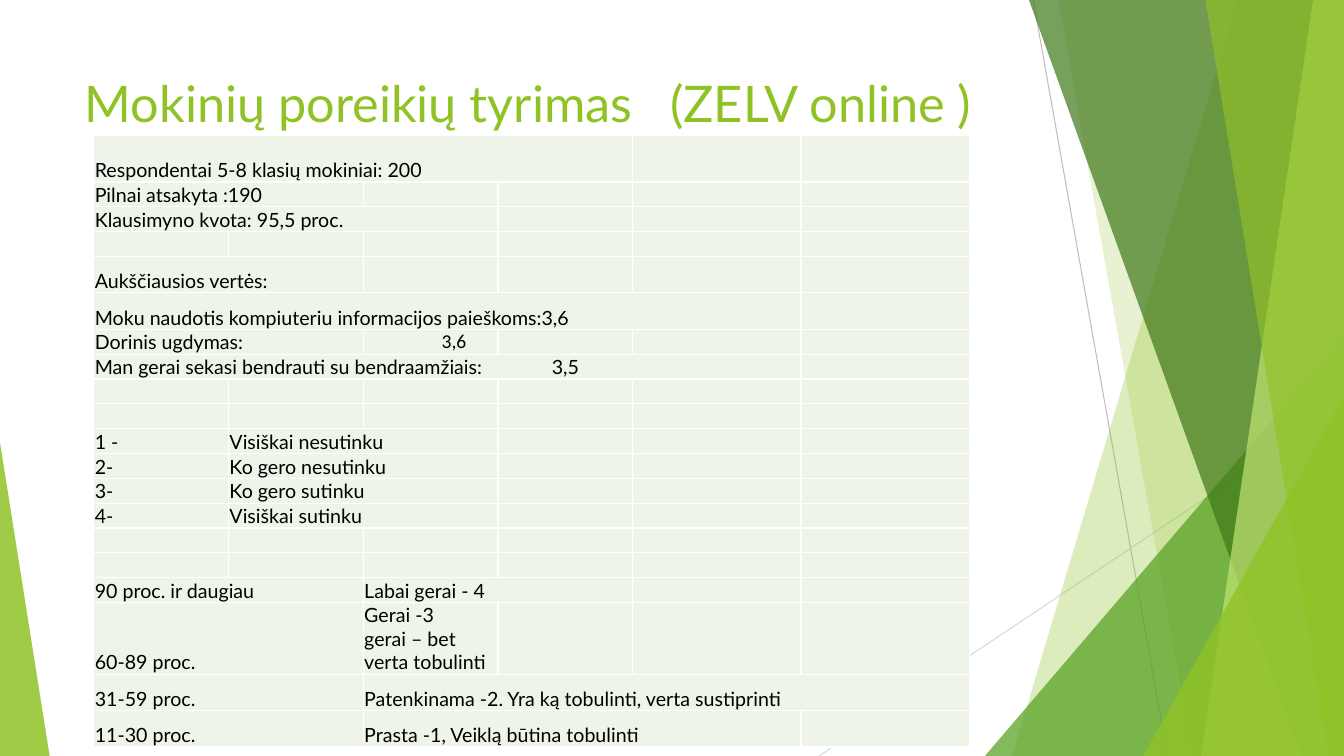
"""Build the slide on the survey of pupils' needs."""
from lxml.etree import SubElement as Sub
from pptx import Presentation
from pptx.dml.color import RGBColor as Rgb
from pptx.enum.shapes import MSO_CONNECTOR as Link, MSO_SHAPE as Kind
from pptx.enum.text import MSO_ANCHOR as Anchor, MSO_AUTO_SIZE as Fit, PP_ALIGN as Align
from pptx.oxml.ns import qn
from pptx.util import Pt

hues = {
    "lime": "90C226", "green": "54A021", "dark": "3F7819", "pale": "C0E474",
    "grey": "BFBFBF", "light": "D9D9D9", "cell": "EEF4E8", "edge": "FFFFFF", "ink": "000000",
}
wide, high = 960, 540


def style(par, size, hue, face="Lato"):
    for run in par.runs:
        run.font.size = Pt(size)
        run.font.name = face
        run.font.color.rgb = Rgb.from_string(hues[hue])


def add_tab(par, pos):
    stops = Sub(par._p.get_or_add_pPr(), qn("a:tabLst"))
    Sub(stops, qn("a:tab"), pos=str(Pt(pos)), algn="l")


deck = Presentation()
deck.slide_width, deck.slide_height = Pt(wide), Pt(high)
slide = deck.slides.add_slide(deck.slide_layouts[5])
shapes = slide.shapes

for hue, ends in [("grey", (738, 0, 834, high)), ("light", (wide, 290, 585, high))]:
    line = shapes.add_connector(Link.STRAIGHT, *map(Pt, ends))
    line.line.color.rgb = Rgb.from_string(hues[hue])
    line.line.width = Pt(0.75)
    Sub(line._element.spPr, qn("a:effectLst"))

facets = [
    ("lime", 30, (884, 723)),
    ("lime", 20, (756, 852)),
    ("green", 72, (703.5, 240, 256.5, 300, 1)),
    ("dark", 70, (735, 929.5)),
    ("pale", 70, (938, 858)),
    ("lime", 65, (861, 949)),
    ("lime", 80, (816.5, 283, 143.5, 257, 1)),
    ("lime", 85, (0, 316, 35.5, 224, 0)),
]
for hue, alpha, form in facets:
    if len(form) == 2:
        top, foot = form
        pen = shapes.build_freeform(Pt(top), Pt(0), scale=1.0)
        pen.add_line_segments([(Pt(wide), Pt(0)), (Pt(wide), Pt(high)), (Pt(foot), Pt(high))])
        facet = pen.convert_to_shape()
    else:
        *box, apex = form
        facet = shapes.add_shape(Kind.ISOSCELES_TRIANGLE, *map(Pt, box))
        facet.adjustments[0] = apex
    facet.shadow.inherit = False
    facet.line.fill.background()
    facet.fill.solid()
    facet.fill.fore_color.rgb = Rgb.from_string(hues[hue])
    color = facet._element.spPr.find(qn("a:solidFill"))[0]
    Sub(color, qn("a:alpha"), val=str(alpha * 1000))

title = shapes.title
title.left, title.top, title.width, title.height = Pt(53.5), Pt(48), Pt(677), Pt(104)
frame = title.text_frame
frame.text = "Mokinių poreikių tyrimas\t(ZELV online )"
frame.auto_size = Fit.NONE
frame.word_wrap = True
frame.vertical_anchor = Anchor.TOP
head = frame.paragraphs[0]
head.alignment = Align.LEFT
add_tab(head, 418)
style(head, 36, "lime")

low, mid = 17.6, 26
rows = [
    (33.5, [(0, 4, "Respondentai 5-8 klasių mokiniai: 200")]),
    (low, [(0, 2, "Pilnai atsakyta :190")]),
    (low, [(0, 3, "Klausimyno kvota: 95,5 proc.")]),
    (low, []),
    (mid, [(0, 2, "Aukščiausios vertės:")]),
    (mid, [(0, 5, "Moku naudotis kompiuteriu informacijos paieškoms:3,6")]),
    (low, [(0, 2, "Dorinis ugdymas:"), (2, 1, "3,6")]),
    (low, [(0, 5, "Man gerai sekasi bendrauti su bendraamžiais:\t3,5")]),
    (low, []),
    (low, []),
    (low, [(0, 1, "1 -"), (1, 2, "Visiškai nesutinku")]),
    (low, [(0, 1, "2-"), (1, 2, "Ko gero nesutinku")]),
    (low, [(0, 1, "3-"), (1, 2, "Ko gero sutinku")]),
    (low, [(0, 1, "4-"), (1, 2, "Visiškai sutinku")]),
    (low, []),
    (low, []),
    (low, [(0, 2, "90 proc. ir daugiau"), (2, 2, "Labai gerai - 4")]),
    (50.5, [(0, 2, "60-89 proc."), (2, 1, "Gerai -3\vgerai – bet verta tobulinti")]),
    (mid, [(0, 2, "31-59 proc."), (2, 4, "Patenkinama -2. Yra ką tobulinti, verta sustiprinti")]),
    (mid, [(0, 2, "11-30 proc."), (2, 3, "Prasta -1, Veiklą būtina tobulinti")]),
]
cols = [96.25] * 4 + [120.25] * 2
tall = sum(height for height, cells in rows)
grid = shapes.add_table(len(rows), len(cols), Pt(67), Pt(96.5), Pt(sum(cols)), Pt(tall)).table
grid.first_row = grid.horz_banding = False
for col, width in zip(grid.columns, cols):
    col.width = Pt(width)

for r, (height, cells) in enumerate(rows):
    grid.rows[r].height = Pt(height)
    for cell in grid.rows[r].cells:
        cell.margin_left = cell.margin_right = cell.margin_top = Pt(0.7)
        cell.margin_bottom = Pt(0)
        cell.vertical_anchor = Anchor.BOTTOM
        for side in "LRTB":
            edge = Sub(cell._tc.get_or_add_tcPr(), qn("a:ln" + side), w=str(Pt(1)))
            Sub(Sub(edge, qn("a:solidFill")), qn("a:srgbClr"), val=hues["edge"])
        cell.fill.solid()
        cell.fill.fore_color.rgb = Rgb.from_string(hues["cell"])
    for c, span, text in cells:
        cell = grid.cell(r, c)
        if span > 1:
            cell.merge(grid.cell(r, c + span - 1))
        par = cell.text_frame.paragraphs[0]
        par.text = text
        style(par, 14, "ink", "Calibri" if text == "3,6" else "Lato")
        if text == "3,6":
            cell.margin_left = Pt(56)
        if "\t" in text:
            add_tab(par, 326.5)
    for cell in grid.rows[r].cells:
        Sub(cell.text_frame.paragraphs[0]._p, qn("a:endParaRPr"), sz="1400")

deck.save("out.pptx")
